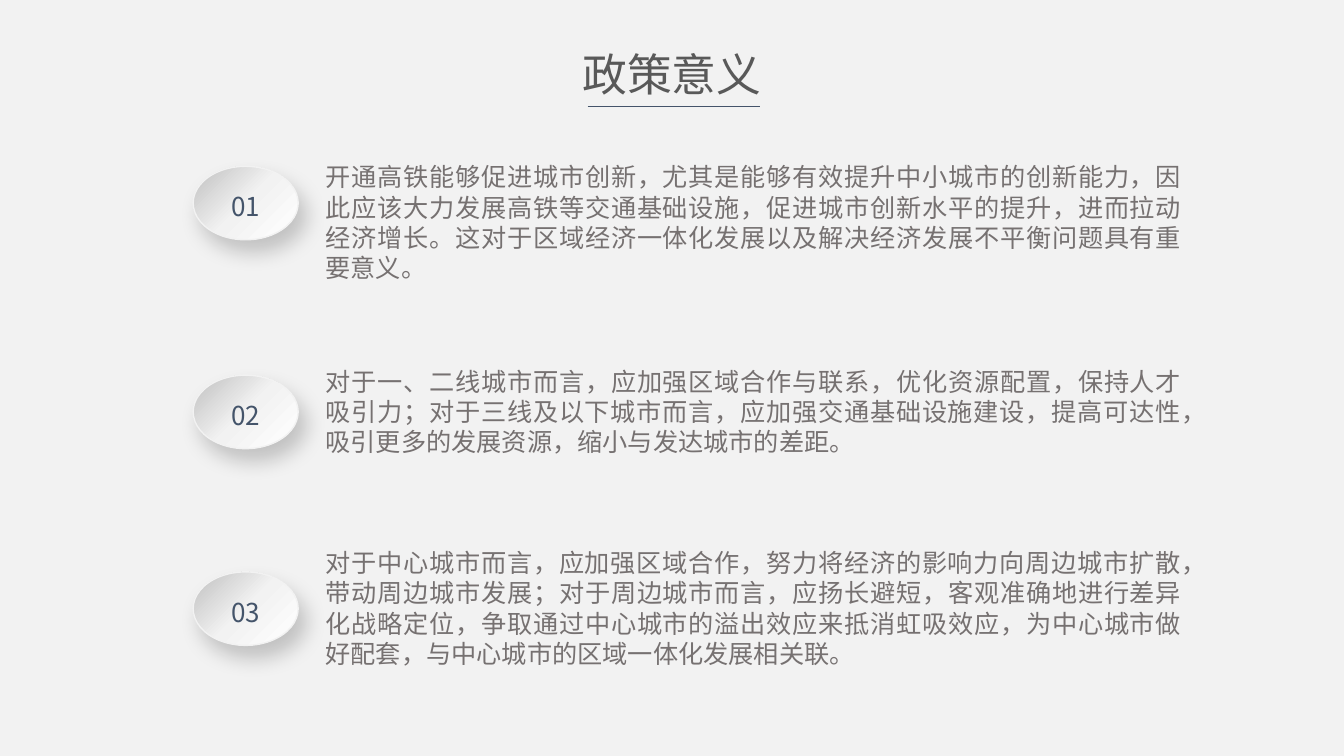
import pptx
import pptx.dml.color
import pptx.enum.shapes
import pptx.enum.text
import pptx.oxml
import pptx.oxml.ns
import pptx.util

Pt = pptx.util.Pt
RGB = pptx.dml.color.RGBColor
ALIGN = pptx.enum.text.PP_ALIGN
ANCHOR = pptx.enum.text.MSO_ANCHOR
SIZING = pptx.enum.text.MSO_AUTO_SIZE
qn = pptx.oxml.ns.qn

FONT = "Noto Sans CJK SC"
PAPER = RGB(0xF2, 0xF2, 0xF2)
DARK = RGB(0x59, 0x59, 0x59)
GRAY = RGB(0x76, 0x71, 0x71)
NAVY = RGB(0x44, 0x54, 0x6A)
BLACK = RGB(0, 0, 0)
SHINE = [(0, RGB(0xBF, 0xBF, 0xBF)), (50, PAPER), (100, RGB(0xFF, 0xFF, 0xFF))]

# Badge top, text top, text height, text
ITEMS = [
    (118.8, 112, 94.5, "开通高铁能够促进城市创新，尤其是能够有效提升中小城市的创新能力，因此应该大力发展高铁等交通基础设施，促进城市创新水平的提升，进而拉动经济增长。这对于区域经济一体化发展以及解决经济发展不平衡问题具有重要意义。"),
    (268, 258, 72.7, "对于一、二线城市而言，应加强区域合作与联系，优化资源配置，保持人才吸引力；对于三线及以下城市而言，应加强交通基础设施建设，提高可达性，吸引更多的发展资源，缩小与发达城市的差距。"),
    (408.5, 387.5, 94.5, "对于中心城市而言，应加强区域合作，努力将经济的影响力向周边城市扩散，带动周边城市发展；对于周边城市而言，应扬长避短，客观准确地进行差异化战略定位，争取通过中心城市的溢出效应来抵消虹吸效应，为中心城市做好配套，与中心城市的区域一体化发展相关联。"),
]


def write(frame, text, size, color, align):
    frame.text = text
    para = frame.paragraphs[0]
    para.alignment = align
    run = para.runs[0]
    run.font.size = Pt(size)
    run.font.name = FONT
    run.font.color.rgb = color
    east = pptx.oxml.parse_xml(
        f'<a:ea {pptx.oxml.ns.nsdecls("a")} typeface="{FONT}"/>')
    run.font._element.append(east)


def add_title(slide, text):
    title = slide.shapes.title
    title.left, title.top, title.width, title.height = map(Pt, (408, 30, 144, 46))
    frame = title.text_frame
    write(frame, text, 32, DARK, ALIGN.CENTER)
    frame.word_wrap = False
    frame.auto_size = SIZING.NONE
    frame.vertical_anchor = ANCHOR.TOP


def add_rule(slide):
    kind = pptx.enum.shapes.MSO_CONNECTOR.STRAIGHT
    rule = slide.shapes.add_connector(kind, Pt(419.8), Pt(76.3), Pt(542.9), Pt(76.3))
    rule.line.color.rgb = NAVY
    rule.line.width = Pt(0.5)
    bare = pptx.oxml.parse_xml(f'<a:effectLst {pptx.oxml.ns.nsdecls("a")}/>')
    rule._element.spPr.append(bare)


def add_body(slide, top, height, text):
    box = slide.shapes.add_textbox(Pt(225.5), Pt(top), Pt(626), Pt(height))
    box.text_frame.word_wrap = True
    write(box.text_frame, text, 18, GRAY, ALIGN.JUSTIFY)


def add_shine(shape):
    """Three-stop gradient fill and a soft drop shadow."""
    names = pptx.oxml.ns.nsdecls("a")
    stops = "".join(
        f'<a:gs pos="{at * 1000}"><a:srgbClr val="{color}"/></a:gs>'
        for at, color in SHINE)
    props = shape._element.spPr
    shape.fill.solid()
    props.replace(props.find(qn("a:solidFill")), pptx.oxml.parse_xml(
        f'<a:gradFill {names} rotWithShape="1"><a:gsLst>{stops}</a:gsLst>'
        '<a:lin ang="2700000" scaled="0"/></a:gradFill>'))
    shape.shadow.inherit = False
    props.find(qn("a:effectLst")).append(pptx.oxml.parse_xml(
        f'<a:outerShdw {names} blurRad="{Pt(15)}" dist="{Pt(10)}" '
        f'dir="{59 * 60000}" algn="ctr" rotWithShape="0">'
        f'<a:srgbClr val="{BLACK}"><a:alpha val="20000"/></a:srgbClr>'
        '</a:outerShdw>'))


def add_badge(slide, top, label):
    oval = pptx.enum.shapes.MSO_SHAPE.OVAL
    badge = slide.shapes.add_shape(oval, Pt(138), Pt(top), Pt(75), Pt(52.5))
    badge.line.color.rgb = PAPER
    badge.line.width = Pt(1)
    add_shine(badge)
    frame = badge.text_frame
    frame.margin_left = frame.margin_right = 0
    frame.margin_top = frame.margin_bottom = 0
    frame.vertical_anchor = ANCHOR.MIDDLE
    write(frame, label, 18.6, NAVY, ALIGN.CENTER)
    frame.paragraphs[0].line_spacing = 1.2


def main():
    deck = pptx.Presentation()
    deck.slide_width, deck.slide_height = Pt(960), Pt(540)
    slide = deck.slides.add_slide(deck.slide_layouts[5])
    slide.background.fill.solid()
    slide.background.fill.fore_color.rgb = PAPER

    # Heading
    add_title(slide, "政策意义")
    add_rule(slide)

    # Numbered points
    for num, (top, head, height, text) in enumerate(ITEMS, 1):
        add_badge(slide, top, f"{num:02}")
        add_body(slide, head, height, text)

    deck.save("out.pptx")


if __name__ == "__main__":
    main()
